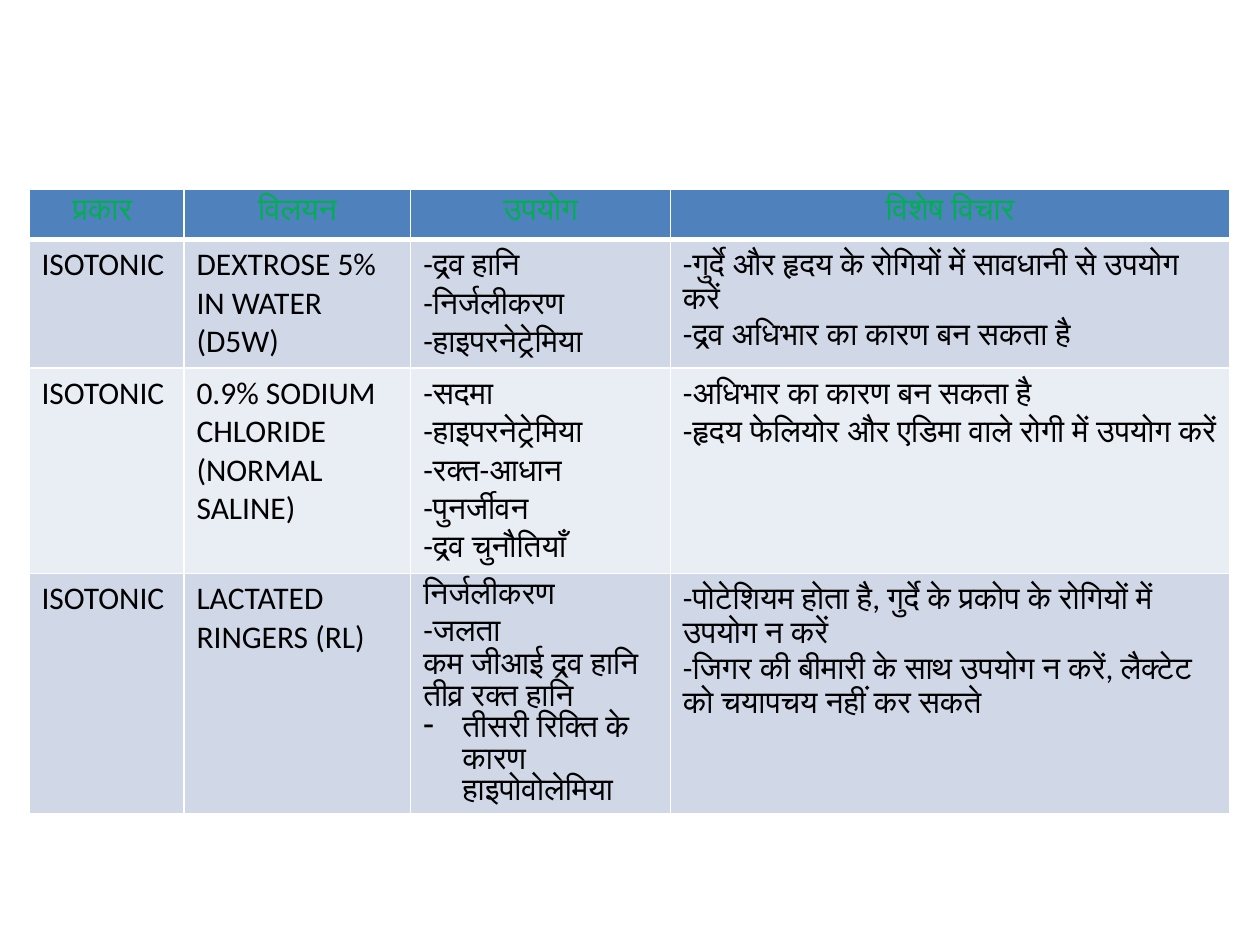
from lxml.etree import SubElement
from pptx import Presentation
from pptx.dml.color import RGBColor
from pptx.enum.text import PP_ALIGN as Align
from pptx.oxml.ns import qn
from pptx.util import Inches, Pt

WHITE = RGBColor(0xFF, 0xFF, 0xFF)
BLACK = RGBColor(0x00, 0x00, 0x00)
GREEN = RGBColor(0x00, 0xB0, 0x50)
HEADER_BLUE = RGBColor(0x4F, 0x81, 0xBD)
BANDS = (RGBColor(0xD0, 0xD8, 0xE8), RGBColor(0xE9, 0xED, 0xF4))

COLUMN_WIDTHS = (1.23, 1.8, 2.06, 4.44)
ROW_HEIGHTS = (0.4, 1.02, 1.63, 1.9)
HEADINGS = ("प्रकार ", "विलयन", "उपयोग", "विशेष विचार")
BULLET = "• "  # marks a line to be set as a hanging dash item
SOLUTIONS = (
    ("ISOTONIC", "DEXTROSE 5% IN WATER (D5W)",
     "-द्रव हानि\n-निर्जलीकरण\n-हाइपरनेट्रेमिया",
     "-गुर्दे और हृदय के रोगियों में सावधानी से उपयोग करें\n"
     "-द्रव अधिभार का कारण बन सकता है"),
    ("ISOTONIC", "0.9% SODIUM CHLORIDE (NORMAL SALINE)",
     "-सदमा\n-हाइपरनेट्रेमिया\n-रक्त-आधान\n-पुनर्जीवन\n-द्रव चुनौतियाँ",
     "-अधिभार का कारण बन सकता है\n"
     "-हृदय फेलियोर और एडिमा वाले रोगी में उपयोग करें"),
    ("ISOTONIC", "LACTATED RINGERS (RL)",
     "निर्जलीकरण\n-जलता\nकम जीआई द्रव हानि\nतीव्र रक्त हानि\n"
     + BULLET + "तीसरी रिक्ति के कारण हाइपोवोलेमिया",
     "-पोटेशियम होता है, गुर्दे के प्रकोप के रोगियों में उपयोग न करें\n"
     "-जिगर की बीमारी के साथ उपयोग न करें, लैक्टेट को चयापचय नहीं कर सकते"),
)


def add_dash_bullet(paragraph):
    properties = paragraph._p.get_or_add_pPr()
    properties.set("marL", str(Inches(0.31)))
    properties.set("indent", str(-Inches(0.31)))
    SubElement(properties, qn("a:buChar"), char="-")


def write_text(text_frame, text, color=BLACK, align=Align.LEFT):
    for index, line in enumerate(text.split("\n")):
        paragraph = text_frame.add_paragraph() if index else text_frame.paragraphs[0]
        paragraph.alignment = align
        if line.startswith(BULLET):
            add_dash_bullet(paragraph)
        run = paragraph.add_run()
        run.text = line.removeprefix(BULLET)
        run.font.name = "Calibri"
        run.font.size = Pt(18)
        run.font.bold = False
        run.font.color.rgb = color


def set_borders(cell, **widths):
    """Draw white borders; widths are points keyed by L, R, T and B."""
    properties = cell._tc.get_or_add_tcPr()
    for position, (side, width) in enumerate(widths.items()):
        line = SubElement(properties, qn(f"a:ln{side}"), w=str(Pt(width)))
        fill = SubElement(line, qn("a:solidFill"))
        SubElement(fill, qn("a:srgbClr"), val=str(WHITE))
        properties.insert(position, line)


def add_solution_table(slide):
    rows = (HEADINGS,) + SOLUTIONS
    frame = slide.shapes.add_table(
        len(rows), len(HEADINGS), Inches(0.23), Inches(1.5),
        Inches(sum(COLUMN_WIDTHS)), Inches(sum(ROW_HEIGHTS)))
    table = frame.table
    for column, width in zip(table.columns, COLUMN_WIDTHS):
        column.width = Inches(width)
    for row_index, (row, height, texts) in enumerate(zip(table.rows, ROW_HEIGHTS, rows)):
        row.height = Inches(height)
        is_header = row_index == 0
        for cell, text in zip(row.cells, texts):
            cell.fill.solid()
            if is_header:
                cell.fill.fore_color.rgb = HEADER_BLUE
                write_text(cell.text_frame, text, color=GREEN, align=Align.CENTER)
            else:
                cell.fill.fore_color.rgb = BANDS[(row_index - 1) % 2]
                write_text(cell.text_frame, text)
            set_borders(cell, L=1, R=1, T=3 if row_index == 1 else 1,
                        B=3 if is_header else 1)


def main():
    presentation = Presentation()
    presentation.slide_width = Inches(10)
    presentation.slide_height = Inches(7.5)
    slide = presentation.slides.add_slide(presentation.slide_layouts[6])
    add_solution_table(slide)
    presentation.save("out.pptx")


if __name__ == "__main__":
    main()
